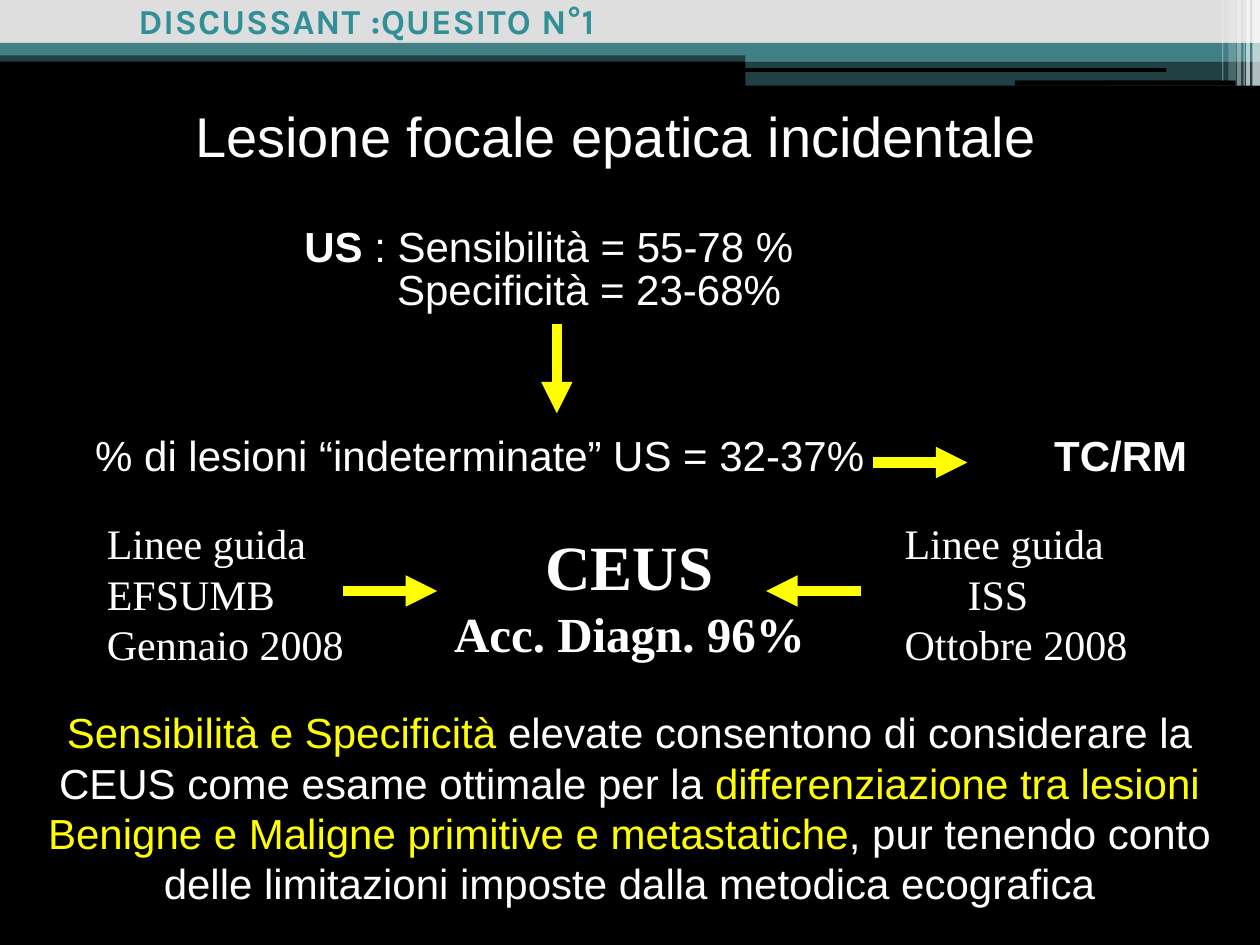
import pptx
import pptx.util
import pptx.dml.color
import pptx.enum.shapes
import pptx.enum.text
import pptx.oxml.ns
import lxml.etree

Pt = pptx.util.Pt
RGBColor = pptx.dml.color.RGBColor
SHAPE = pptx.enum.shapes.MSO_SHAPE
ANCHOR = pptx.enum.text.MSO_ANCHOR
ALIGN = pptx.enum.text.PP_ALIGN
qn = pptx.oxml.ns.qn

BLACK = RGBColor(0x00, 0x00, 0x00)
WHITE = RGBColor(0xFF, 0xFF, 0xFF)
YELLOW = RGBColor(0xFF, 0xFF, 0x00)
TEAL = RGBColor(0x43, 0x80, 0x86)
LIGHT_GREY = RGBColor(0xDE, 0xDE, 0xDE)
HEADING_TEAL = RGBColor(0x31, 0x8F, 0x98)

SANS = {"name": "Arial", "size": Pt(24)}
SERIF = {"name": "Times New Roman", "size": Pt(24)}


def set_attributes(target, values):
    for name, value in values.items():
        setattr(target, name, value)


def add_bar(slide, box, color, opacity=100, kind=SHAPE.RECTANGLE):
    shape = slide.shapes.add_shape(kind, *map(Pt, box))
    shape.shadow.inherit = False
    shape.line.fill.background()
    shape.fill.solid()
    shape.fill.fore_color.rgb = color
    if opacity < 100:
        color_element = shape._element.spPr.find(".//" + qn("a:srgbClr"))
        alpha = lxml.etree.SubElement(color_element, qn("a:alpha"))
        alpha.set("val", str(opacity * 1000))


def add_arrow(slide, start, end):
    connector = slide.shapes.add_connector(
        pptx.enum.shapes.MSO_CONNECTOR.STRAIGHT, *map(Pt, start + end))
    connector.line.color.rgb = YELLOW
    connector.line.width = Pt(6)
    line = connector.line._get_or_add_ln()
    lxml.etree.SubElement(line, qn("a:tailEnd")).set("type", "triangle")
    lxml.etree.SubElement(connector._element.spPr, qn("a:effectLst"))


def add_text(slide, box, paragraphs, font, wrap=True, anchor=ANCHOR.TOP):
    """Each paragraph is (format, runs); each run is (text, colour, font changes)."""
    frame = slide.shapes.add_textbox(*map(Pt, box)).text_frame
    set_attributes(frame, {"word_wrap": wrap, "vertical_anchor": anchor})
    for index, (paragraph_format, runs) in enumerate(paragraphs):
        paragraph = frame.add_paragraph() if index else frame.paragraphs[0]
        set_attributes(paragraph, paragraph_format)
        for text, color, changes in runs:
            run = paragraph.add_run()
            run.text = text
            set_attributes(run.font, {**font, **changes})
            run.font.color.rgb = color
    return frame


def indent(paragraph, left, tab=None):
    properties = paragraph._p.get_or_add_pPr()
    properties.set("marL", str(Pt(left)))
    if tab:
        tabs = lxml.etree.SubElement(properties, qn("a:tabLst"))
        stop = lxml.etree.SubElement(tabs, qn("a:tab"))
        stop.set("pos", str(Pt(tab)))
        stop.set("algn", "l")


def add_header_bands(slide, box):
    left, top, width, height = box
    split = left + 426
    right_width = width - 426
    # Horizontal bands
    add_bar(slide, (left, top + 28.8, width, 6.5), TEAL, 50)
    add_bar(slide, (left, top, width, 24.5), LIGHT_GREY)
    add_bar(slide, (left, top + 24.5, width, 7.2), TEAL)
    add_bar(slide, (split, top + 28, right_width, 7.2), TEAL)
    add_bar(slide, (split, top + 34.6, right_width, 14.4), TEAL, 50)
    # Black slots
    for x, y, length, thickness in ((425.5, 38.9, 241, 2.2), (580, 46, 126, 2.9)):
        add_bar(slide, (left + x, top + y, length, thickness), BLACK,
                kind=SHAPE.ROUNDED_RECTANGLE)
    # Pale vertical stripes: distance from the right edge, width, cut, opacity
    for distance, stripe, cut, opacity in (
            (4.3, 4.3, 0, 65), (7.9, 2.2, 0, 65), (9.4, 0.7, 0, 60),
            (13, 2.2, 0, 40), (18, 4.3, 2.9, 20), (21.6, 0.7, 2.9, 30)):
        add_bar(slide, (left + width - distance, top, stripe, height - cut),
                WHITE, opacity)


def add_heading(slide, box):
    frame = add_text(slide, box, [({}, [("DISCUSSANT :QUESITO N°1", HEADING_TEAL, {})])],
                     {"name": "Karla", "size": Pt(20), "bold": True})
    frame.paragraphs[0].runs[0].font._element.set("spc", "50")


def add_title(slide, box):
    add_text(slide, box, [({}, [("Lesione focale epatica incidentale", WHITE, {})])],
             {"name": "Arial", "size": Pt(32)}, anchor=ANCHOR.MIDDLE)


def add_ultrasound_figures(slide, box):
    left, top = box[:2]
    bold = {"bold": True}
    tight = {"line_spacing": 0.75, "space_before": Pt(3)}
    frame = add_text(slide, box, [
        (tight, [("US", WHITE, bold), (" : Sensibilità = 55-78 %", WHITE, {})]),
        (tight, [("Specificità = 23-68%", WHITE, {})]),
        ({"space_before": Pt(67)},
         [("% di lesioni “indeterminate” US = 32-37%\t", WHITE, {}),
          ("TC/RM", WHITE, bold)]),
    ], SANS)
    for paragraph, margin, tab in zip(frame.paragraphs, (161, 214, 41.5),
                                      (None, None, 548)):
        indent(paragraph, margin, tab)
    add_arrow(slide, (left + 312.4, top + 56), (left + 312.4, top + 107.3))
    add_arrow(slide, (left + 493, top + 135.4), (left + 547, top + 135.4))


def add_guidelines(slide, box):
    left, top, width, height = box
    # Guidelines on both sides, centre result between them
    for x, lines, side_width in (
            (left, ("Linee guida", "EFSUMB", "Gennaio 2008"), 151.2),
            (left + 455.8, ("Linee guida", "ISS", "Ottobre 2008"), 143.3)):
        frame = add_text(slide, (x, top, side_width, height),
                         [({}, [(line, WHITE, {})]) for line in lines],
                         SERIF, wrap=False)
        if "ISS" in lines:
            indent(frame.paragraphs[1], 36)
    centered = {"alignment": ALIGN.CENTER}
    add_text(slide, (left + 198, top + 5.8, 215.3, 84.2), [
        (centered, [("CEUS", WHITE, {"size": Pt(36)})]),
        (centered, [("Acc. Diagn. 96%", WHITE, {"size": Pt(28)})]),
    ], {**SERIF, "bold": True}, wrap=False)
    # Arrows towards the centre
    for start, end in ((141.8, 195.8), (437.8, 383.8)):
        add_arrow(slide, (left + start, top + 45.4), (left + end, top + 45.4))


def add_conclusion(slide, box):
    add_text(slide, box, [({"alignment": ALIGN.CENTER}, [
        ("Sensibilità e Specificità ", YELLOW, {}),
        ("elevate consentono di considerare la CEUS come esame ottimale per la ",
         WHITE, {}),
        ("differenziazione tra lesioni Benigne e Maligne primitive e metastatiche",
         YELLOW, {}),
        (", pur tenendo conto delle limitazioni imposte dalla metodica ecografica",
         WHITE, {}),
    ])], SANS)


def main():
    presentation = pptx.Presentation()
    set_attributes(presentation, {"slide_width": Pt(720), "slide_height": Pt(540)})
    slide = presentation.slides.add_slide(presentation.slide_layouts[6])
    slide.background.fill.solid()
    slide.background.fill.fore_color.rgb = BLACK

    add_header_bands(slide, (0, 0, 720, 49))
    add_title(slide, (104.4, 32.4, 505.4, 90))
    add_ultrasound_figures(slide, (5.8, 128.9, 714.2, 293.8))
    add_guidelines(slide, (54, 292.3, 599, 94.3))
    add_heading(slide, (72, -3.6, 479.5, 31.7))
    add_conclusion(slide, (5.8, 400.3, 707.8, 123.8))
    presentation.save("out.pptx")


if __name__ == "__main__":
    main()
